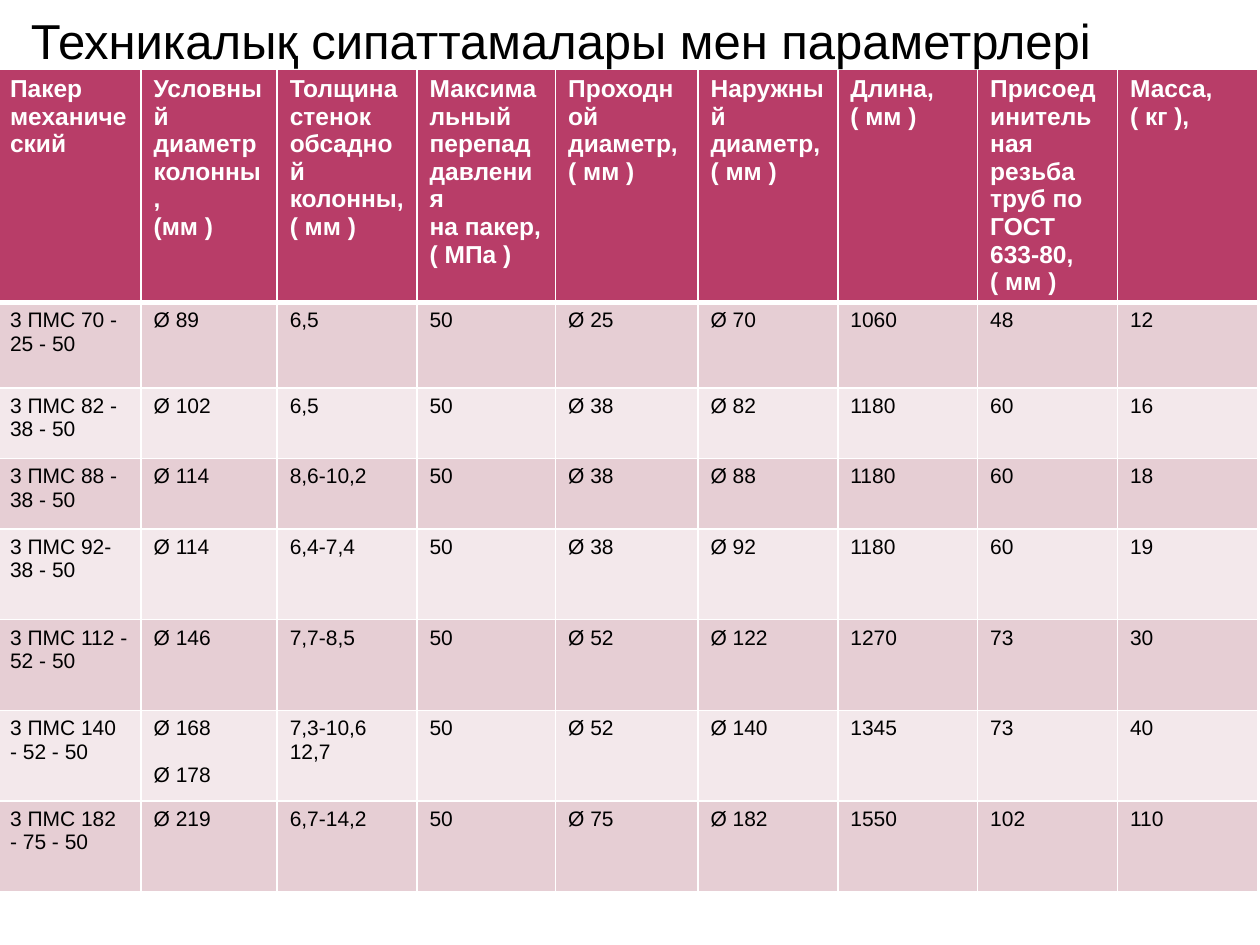
from lxml import etree
from pptx import Presentation
from pptx.dml.color import RGBColor
from pptx.enum.text import MSO_ANCHOR, MSO_AUTO_SIZE, PP_ALIGN
from pptx.oxml.ns import qn
from pptx.util import Inches, Pt

CENTER = PP_ALIGN.CENTER
LEFT = PP_ALIGN.LEFT
TOP = MSO_ANCHOR.TOP
FIT_SHAPE = MSO_AUTO_SIZE.SHAPE_TO_FIT_TEXT

FONT = "Arial"
WHITE = RGBColor(0xFF, 0xFF, 0xFF)
BLACK = RGBColor(0x00, 0x00, 0x00)
CRIMSON = RGBColor(0xB8, 0x3D, 0x68)
PINK = RGBColor(0xE6, 0xCE, 0xD4)
PALE_PINK = RGBColor(0xF3, 0xE8, 0xEB)

TITLE = "Техникалық сипаттамалары мен параметрлері"
COLUMN_WIDTHS = [1.14, 1.08, 1.11, 1.1, 1.13, 1.11, 1.11, 1.11, 1.11]
ROW_HEIGHTS = [1.74, 0.68, 0.56, 0.56, 0.72, 0.72, 0.72, 0.72]
HEADERS = [
    "Пакер\nмеханический",
    "Условный\nдиаметр\nколонны,\n(мм )",
    "Толщина стенок обсадной колонны,\n( мм )",
    "Максимальный перепад давления\nна пакер,\n( МПа )",
    "Проходной диаметр,\n( мм )",
    "Наружный диаметр,\n( мм )",
    "Длина,\n( мм )",
    "Присоединительная резьба труб по\nГОСТ 633-80, ( мм )",
    "Масса,\n( кг ),",
]
PACKERS = [
    ["3 ПМС 70 - 25 - 50", "Ø 89", "6,5", "50", "Ø 25", "Ø 70", "1060", "48", "12"],
    ["3 ПМС 82 - 38 - 50", "Ø 102", "6,5", "50", "Ø 38", "Ø 82", "1180", "60", "16"],
    ["3 ПМС 88 - 38 - 50", "Ø 114", "8,6-10,2", "50", "Ø 38", "Ø 88", "1180", "60", "18"],
    ["3 ПМС 92- 38 - 50", "Ø 114", "6,4-7,4", "50", "Ø 38", "Ø 92", "1180", "60", "19"],
    ["3 ПМС 112 - 52 - 50", "Ø 146", "7,7-8,5", "50", "Ø 52", "Ø 122", "1270", "73", "30"],
    ["3 ПМС 140 - 52 - 50", "Ø 168\nØ 178", "7,3-10,6\n12,7", "50", "Ø 52", "Ø 140",
     "1345", "73", "40"],
    ["3 ПМС 182 - 75 - 50", "Ø 219", "6,7-14,2", "50", "Ø 75", "Ø 182", "1550", "102", "110"],
]


def write_text(text_frame, text, *, size, color, bold=False, align=LEFT):
    text_frame.text = text
    for paragraph in text_frame.paragraphs:
        paragraph.alignment = align
        for run in paragraph.runs:
            run.font.name = FONT
            run.font.size = Pt(size)
            run.font.bold = bold
            run.font.color.rgb = color


def set_borders(cell, *, top=1, bottom=1):
    properties = cell._tc.get_or_add_tcPr()
    for side, width in (("lnL", 1), ("lnR", 1), ("lnT", top), ("lnB", bottom)):
        line = etree.SubElement(properties, qn(f"a:{side}"), w=str(Pt(width)))
        fill = etree.SubElement(line, qn("a:solidFill"))
        etree.SubElement(fill, qn("a:srgbClr"), val=str(WHITE))


def fill_cell(cell, color):
    cell.fill.solid()
    cell.fill.fore_color.rgb = color


def add_packer_table(slide):
    frame = slide.shapes.add_table(
        len(ROW_HEIGHTS), len(COLUMN_WIDTHS),
        Inches(-0.02), Inches(0.55), Inches(10.02), Inches(sum(ROW_HEIGHTS)))
    table = frame.table
    for column, width in zip(table.columns, COLUMN_WIDTHS):
        column.width = Inches(width)
    for row, height in zip(table.rows, ROW_HEIGHTS):
        row.height = Inches(height)
    for column_index, header in enumerate(HEADERS):
        cell = table.cell(0, column_index)
        write_text(cell.text_frame, header, size=14, color=WHITE, bold=True)
        set_borders(cell, bottom=3)
        fill_cell(cell, CRIMSON)
    for row_index, packer in enumerate(PACKERS, start=1):
        for column_index, value in enumerate(packer):
            cell = table.cell(row_index, column_index)
            write_text(cell.text_frame, value, size=12, color=BLACK)
            set_borders(cell, top=3 if row_index == 1 else 1)
            fill_cell(cell, PINK if row_index % 2 else PALE_PINK)
    second_diameter = table.cell(6, 1).text_frame.paragraphs[1]
    second_diameter.space_before = Pt(13.5)
    return frame


def format_title(title):
    title.left, title.top = Inches(-0.02), Inches(0.03)
    title.width, title.height = Inches(8.94), Inches(0.57)
    text_frame = title.text_frame
    text_frame.word_wrap = True
    text_frame.auto_size = FIT_SHAPE
    text_frame.vertical_anchor = TOP
    write_text(text_frame, TITLE, size=28, color=BLACK, align=CENTER)


def main():
    presentation = Presentation()
    presentation.slide_width = Inches(10)
    presentation.slide_height = Inches(7.5)
    slide = presentation.slides.add_slide(presentation.slide_layouts[5])
    table_frame = add_packer_table(slide)
    title = slide.shapes.title
    format_title(title)
    table_frame.element.addnext(title.element)
    presentation.save("out.pptx")


if __name__ == "__main__":
    main()
